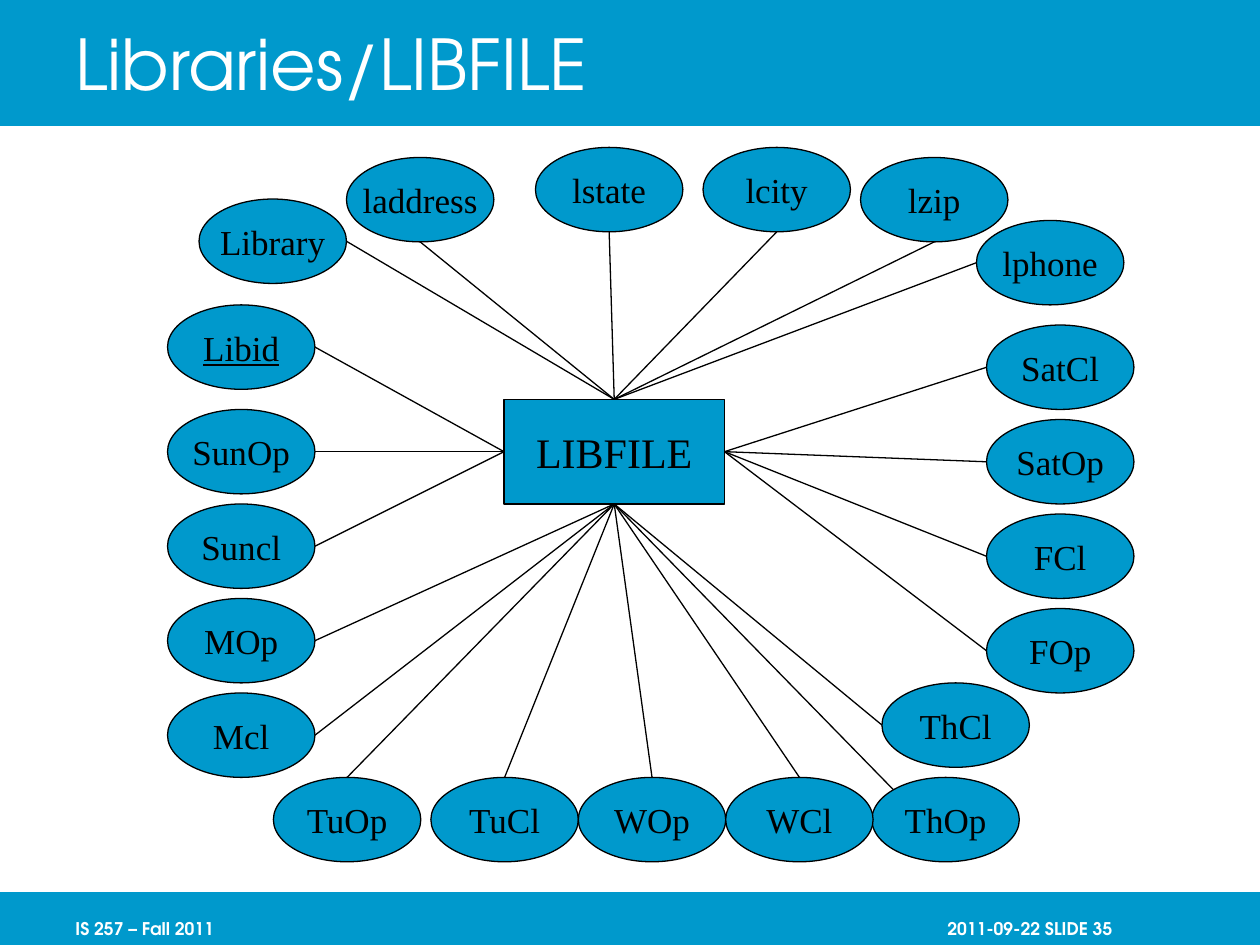
from lxml.etree import SubElement
from pptx import Presentation
from pptx.dml.color import RGBColor
from pptx.enum.shapes import MSO_CONNECTOR as CONN, MSO_SHAPE as SHAPE
from pptx.enum.text import MSO_ANCHOR as ANCHOR, PP_ALIGN as ALIGN
from pptx.oxml.ns import qn
from pptx.util import Inches, Pt

BLUE = RGBColor(0x00, 0x99, 0xCC)
BLACK = RGBColor(0x00, 0x00, 0x00)
WHITE = RGBColor(0xFF, 0xFF, 0xFF)

TOP, LEFT, BOTTOM, RIGHT = range(4)
OVAL_W, OVAL_H = 1.17, 0.67
FROM_TOP, FROM_LEFT, FROM_BOTTOM, FROM_RIGHT = (0.5, 0), (0, 0.5), (0.5, 1), (1, 0.5)
FROM_TOP_LEFT = (0.146, 0.146)


class Diagram:
    heading_font = "TeX Gyre Adventor"
    label_font = "Times New Roman"
    line_width = Pt(0.75)

    def __init__(self, slide):
        self.slide = slide

    def style(self, p, text, font, size, color, bold=False, underline=False):
        p.text = text
        p.font.name = font
        p.font.size = Pt(size)
        p.font.color.rgb = color
        p.font.bold = bold
        p.font.underline = underline

    def shape(self, kind, x, y, w, h):
        sp = self.slide.shapes.add_shape(kind, Inches(x), Inches(y), Inches(w), Inches(h))
        sp.shadow.inherit = False
        sp.fill.solid()
        sp.fill.fore_color.rgb = BLUE
        return sp

    def band(self, y, h):
        self.shape(SHAPE.RECTANGLE, 0, y, 10, h).line.fill.background()

    def text(self, x, y, w, h, text, size, anchor, bold=False):
        tf = self.slide.shapes.add_textbox(Inches(x), Inches(y), Inches(w), Inches(h)).text_frame
        tf.word_wrap = True
        tf.vertical_anchor = anchor
        tf.margin_right = 0
        self.style(tf.paragraphs[0], text, self.heading_font, size, WHITE, bold)

    def node(self, kind, x, y, w, h, text, size, underline=False):
        sp = self.shape(kind, x, y, w, h)
        sp.line.color.rgb = BLACK
        sp.line.width = self.line_width
        tf = sp.text_frame
        tf.word_wrap = False
        tf.vertical_anchor = ANCHOR.MIDDLE
        p = tf.paragraphs[0]
        p.alignment = ALIGN.CENTER
        self.style(p, text, self.label_font, size, BLACK, underline=underline)
        return sp

    def link(self, x, y, entity, side):
        line = self.slide.shapes.add_connector(CONN.STRAIGHT, Inches(x), Inches(y), 0, 0)
        line.end_connect(entity, side)
        line.line.color.rgb = BLACK
        line.line.width = self.line_width
        SubElement(line._element.spPr, qn("a:effectLst"))


def main():
    prs = Presentation()
    prs.slide_width, prs.slide_height = Inches(10), Inches(7.5)
    d = Diagram(prs.slides.add_slide(prs.slide_layouts[6]))

    d.band(0, 1)
    d.band(7.08, 0.42)
    d.text(7.42, 7.08, 2.08, 0.42, "2011-09-22 SLIDE 35", 10, ANCHOR.BOTTOM, bold=True)
    d.text(0.5, 7.08, 2.08, 0.42, "IS 257 – Fall 2011", 10, ANCHOR.BOTTOM, bold=True)
    d.text(0.5, 0, 8.5, 1, "Libraries/LIBFILE", 40, ANCHOR.MIDDLE)

    attributes = [
        ("Libid", 1.33, 2.42, FROM_RIGHT, LEFT),
        ("Library", 1.58, 1.58, FROM_RIGHT, TOP),
        ("laddress", 2.75, 1.25, FROM_BOTTOM, TOP),
        ("lstate", 4.25, 1.17, FROM_BOTTOM, TOP),
        ("lcity", 5.58, 1.17, FROM_BOTTOM, TOP),
        ("lzip", 6.83, 1.25, FROM_BOTTOM, TOP),
        ("lphone", 7.75, 1.75, FROM_LEFT, TOP),
        ("ThCl", 7, 5.42, FROM_LEFT, BOTTOM),
        ("ThOp", 6.92, 6.17, FROM_TOP_LEFT, BOTTOM),
        ("TuOp", 2.17, 6.17, FROM_TOP, BOTTOM),
    ]
    for i, (name, side) in enumerate([("SunOp", LEFT), ("Suncl", LEFT), ("MOp", BOTTOM), ("Mcl", BOTTOM)]):
        attributes.append((name, 1.33, 3.25 + 0.75 * i, FROM_RIGHT, side))
    for i, name in enumerate(["SatCl", "SatOp", "FCl", "FOp"]):
        attributes.append((name, 7.83, 2.58 + 0.75 * i, FROM_LEFT, RIGHT))
    for i, name in enumerate(["TuCl", "WOp", "WCl"]):
        attributes.append((name, 3.42 + OVAL_W * i, 6.17, FROM_TOP, BOTTOM))

    entity = d.node(SHAPE.RECTANGLE, 4, 3.17, 1.75, 0.83, "LIBFILE", 24)
    for name, x, y, _, _ in attributes:
        d.node(SHAPE.OVAL, x, y, OVAL_W, OVAL_H, name, 20, underline=name == "Libid")
    for _, x, y, (fx, fy), side in attributes:
        d.link(x + fx * OVAL_W, y + fy * OVAL_H, entity, side)

    prs.save("out.pptx")


if __name__ == "__main__":
    main()
